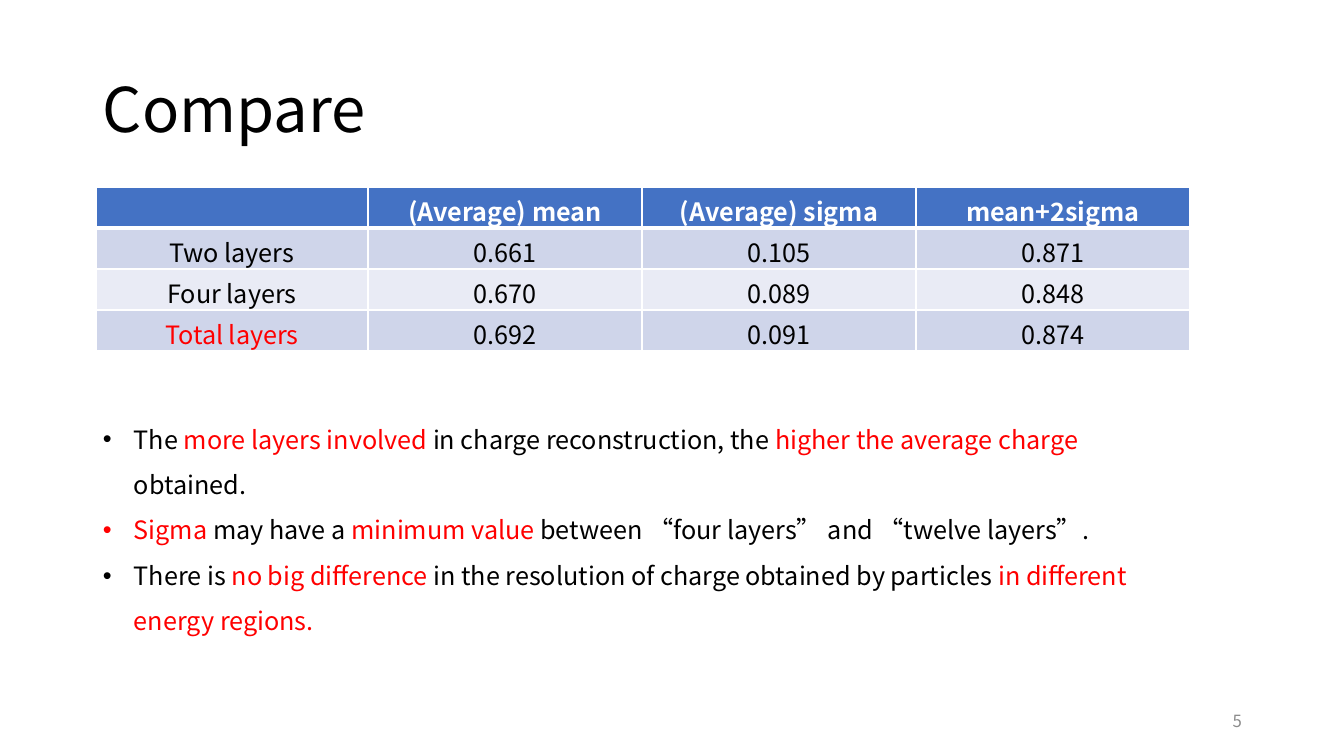
from lxml import etree
from pptx import Presentation
from pptx.dml.color import RGBColor
from pptx.enum.text import MSO_ANCHOR, PP_ALIGN
from pptx.oxml.ns import qn
from pptx.util import Emu, Pt

CENTER, RIGHT, LEFT = PP_ALIGN.CENTER, PP_ALIGN.RIGHT, PP_ALIGN.LEFT
TOP, MIDDLE = MSO_ANCHOR.TOP, MSO_ANCHOR.MIDDLE

BLACK = RGBColor(0x00, 0x00, 0x00)
WHITE = RGBColor(0xFF, 0xFF, 0xFF)
RED = RGBColor(0xFF, 0x00, 0x00)
GRAY = RGBColor(0x8C, 0x8C, 0x8C)
HEADER_BLUE = RGBColor(0x44, 0x72, 0xC4)
BAND_DARK = RGBColor(0xCF, 0xD5, 0xEA)
BAND_LIGHT = RGBColor(0xE9, 0xEB, 0xF5)

FONT = "Noto Sans CJK SC"
PX_PER_INCH = 100.8
SLIDE_SIZE = (1344, 756)
TITLE_BOX = (93, 40, 1159, 146)
TABLE_BOX = (96, 187, 1094, 164)
NOTES_BOX = (93, 404, 1065, 188)
NUMBER_BOX = (950, 701, 302, 40)
LABEL_WIDTH = 272
BULLET_INDENT = 31

ROWS = [
    ["", "(Average) mean", "(Average) sigma", "mean+2sigma"],
    ["Two layers", "0.661", "0.105", "0.871"],
    ["Four layers", "0.670", "0.089", "0.848"],
    ["Total layers", "0.692", "0.091", "0.874"],
]
HIGHLIGHTED_LABEL = "Total layers"

FINDINGS = [
    [("The ", BLACK), ("more layers involved ", RED),
     ("in charge reconstruction, the ", BLACK),
     ("higher the average charge ", RED), ("obtained.", BLACK)],
    [("Sigma", RED), (" may have a ", BLACK), ("minimum value ", RED),
     ("between “four layers” and “twelve layers”.", BLACK)],
    [("There is ", BLACK), ("no big difference ", RED),
     ("in the resolution of charge obtained by particles ", BLACK),
     ("in different energy regions.", RED)],
]


def px(length):
    return Emu(round(length * 914400 / PX_PER_INCH))


def set_values(target, values):
    for name, value in values.items():
        setattr(target, name, value)


def add_run(paragraph, text, size, color, bold=False):
    run = paragraph.add_run()
    run.text = text
    set_values(run.font, {"name": FONT, "size": Pt(size), "bold": bold})
    run.font.color.rgb = color
    east_asian = etree.SubElement(run.font._element, qn("a:ea"))
    east_asian.set("typeface", FONT)


def add_text(slide, box, paragraphs, size, anchor=TOP, **paragraph_format):
    shape = slide.shapes.add_textbox(*map(px, box))
    frame = shape.text_frame
    set_values(frame, {"word_wrap": True, "vertical_anchor": anchor})
    for index, runs in enumerate(paragraphs):
        paragraph = frame.add_paragraph() if index else frame.paragraphs[0]
        set_values(paragraph, paragraph_format)
        for text, color in runs:
            add_run(paragraph, text, size, color)
    return frame


def add_title(slide, box):
    add_text(slide, box, [[("Compare", BLACK)]], 44, MIDDLE,
             alignment=LEFT, line_spacing=0.9)


def add_page_number(slide, box):
    add_text(slide, box, [[("5", GRAY)]], 12, MIDDLE, alignment=RIGHT)


def add_findings(slide, box):
    frame = add_text(slide, box, FINDINGS, 18, alignment=LEFT, line_spacing=1.5)
    for paragraph in frame.paragraphs:
        properties = paragraph._p.get_or_add_pPr()
        properties.set("marL", str(px(BULLET_INDENT)))
        properties.set("indent", str(-px(BULLET_INDENT)))
        bullet_font = etree.SubElement(properties, qn("a:buFont"))
        bullet_font.set("typeface", "Arial")
        etree.SubElement(properties, qn("a:buChar")).set("char", "•")


def set_borders(cell, widths):
    properties = cell._tc.get_or_add_tcPr()
    for side, width in widths.items():
        line = etree.SubElement(properties, qn(f"a:ln{side}"))
        line.set("w", str(Pt(width)))
        fill = etree.SubElement(line, qn("a:solidFill"))
        etree.SubElement(fill, qn("a:srgbClr")).set("val", str(WHITE))


def add_comparison_table(slide, box):
    left, top, width, height = box
    row_count, column_count = len(ROWS), len(ROWS[0])
    table = slide.shapes.add_table(row_count, column_count, *map(px, box)).table
    value_width = (width - LABEL_WIDTH) // (column_count - 1)
    for index, column in enumerate(table.columns):
        column.width = px(value_width if index else LABEL_WIDTH)
    for row_index, texts in enumerate(ROWS):
        is_header = row_index == 0
        table.rows[row_index].height = px(height // row_count)
        band = BAND_DARK if row_index % 2 else BAND_LIGHT
        for column_index, text in enumerate(texts):
            cell = table.cell(row_index, column_index)
            set_borders(cell, {"L": 1, "R": 1, "T": 3 if row_index == 1 else 1,
                               "B": 3 if is_header else 1})
            cell.fill.solid()
            cell.fill.fore_color.rgb = HEADER_BLUE if is_header else band
            paragraph = cell.text_frame.paragraphs[0]
            paragraph.alignment = CENTER
            color = RED if text == HIGHLIGHTED_LABEL else BLACK
            if text:
                add_run(paragraph, text, 18, WHITE if is_header else color, is_header)


def main():
    presentation = Presentation()
    presentation.slide_width, presentation.slide_height = map(px, SLIDE_SIZE)
    slide = presentation.slides.add_slide(presentation.slide_layouts[6])
    add_title(slide, TITLE_BOX)
    add_comparison_table(slide, TABLE_BOX)
    add_page_number(slide, NUMBER_BOX)
    add_findings(slide, NOTES_BOX)
    presentation.save("out.pptx")


if __name__ == "__main__":
    main()
